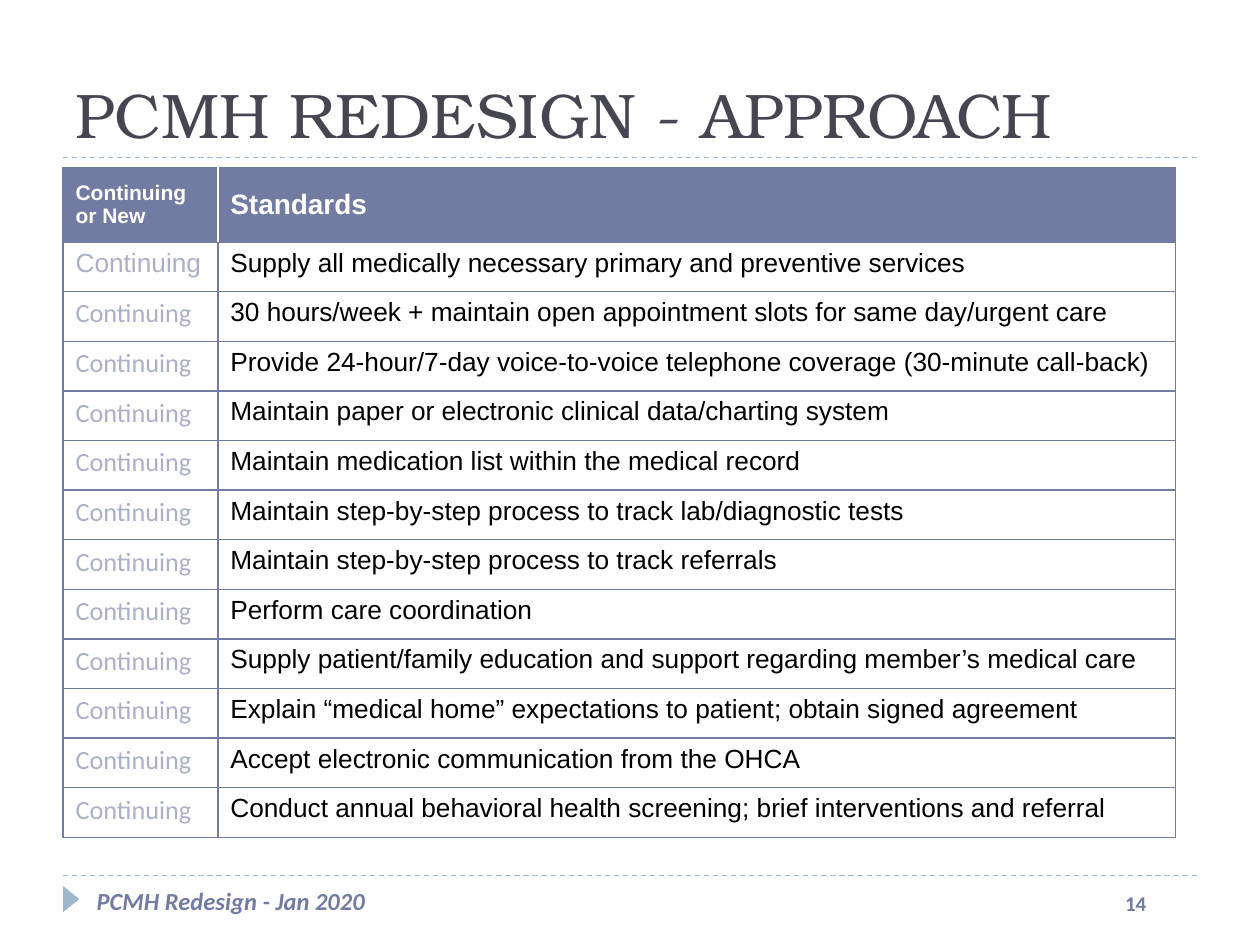
from dataclasses import dataclass

from lxml.etree import SubElement
from pptx import Presentation
from pptx.dml.color import RGBColor
from pptx.enum.dml import MSO_LINE_DASH_STYLE as Dash
from pptx.enum.shapes import MSO_CONNECTOR_TYPE as Connector, MSO_SHAPE as Shape
from pptx.enum.text import MSO_ANCHOR as Anchor, MSO_AUTO_SIZE as AutoSize, PP_ALIGN as Align
from pptx.oxml import parse_xml
from pptx.oxml.ns import nsdecls, qn
from pptx.util import Cm, Pt

PURPLE, PALE_PURPLE, SLATE, SKY = "727CA3", "AAB0C8", "464653", "9FB8CD"
WHITE, BLACK = "FFFFFF", "000000"
LEFT = 1.27
HEADER_HEIGHT, ROW_HEIGHT = 1.5, 1.0
COLUMN_WIDTHS = (3.12, 19.31)


@dataclass
class Standard:
    text: str
    status: str = "Continuing"
    status_font: str = "Calibri"


STANDARDS = [
    Standard("Supply all medically necessary primary and preventive services", status_font="Arial"),
    Standard("30 hours/week + maintain open appointment slots for same day/urgent care"),
    Standard("Provide 24-hour/7-day voice-to-voice telephone coverage (30-minute call-back)"),
    Standard("Maintain paper or electronic clinical data/charting system"),
    Standard("Maintain medication list within the medical record"),
    Standard("Maintain step-by-step process to track lab/diagnostic tests"),
    Standard("Maintain step-by-step process to track referrals"),
    Standard("Perform care coordination"),
    Standard("Supply patient/family education and support regarding member’s medical care"),
    Standard("Explain “medical home” expectations to patient; obtain signed agreement"),
    Standard("Accept electronic communication from the OHCA"),
    Standard("Conduct annual behavioral health screening; brief interventions and referral"),
]


def rgb(color: str) -> RGBColor:
    return RGBColor.from_string(color)


def write(frame, text: str, *, size: float, color: str, font: str = "Arial",
          bold: bool = False, italic: bool = False) -> None:
    frame.word_wrap = True
    paragraph = frame.paragraphs[0]
    paragraph.alignment = Align.LEFT
    run = paragraph.add_run()
    run.text = text
    run.font.name, run.font.size = font, Pt(size)
    run.font.bold, run.font.italic = bold, italic
    run.font.color.rgb = rgb(color)


def add_rule(slide, y: float) -> None:
    """Draw a dashed horizontal line across the content width."""
    rule = slide.shapes.add_connector(Connector.STRAIGHT, Cm(LEFT), Cm(y), Cm(24.13), Cm(y))
    rule.line.color.rgb = rgb(SKY)
    rule.line.width = Pt(0.75)
    rule.line.dash_style = Dash.DASH
    SubElement(rule._element.spPr, qn("a:effectLst"))


def add_footer_text(slide, text: str, left: float, top: float, width: float, height: float,
                    *, size: float, italic: bool = False) -> None:
    box = slide.shapes.add_textbox(Cm(left), Cm(top), Cm(width), Cm(height))
    write(box.text_frame, text, size=size, color=PURPLE, font="Calibri", bold=True, italic=italic)


def set_borders(cell, **sides: tuple[str, float]) -> None:
    """Set borders, given as L, R, T, B in that order, each a colour and a width in points."""
    properties = cell._tc.get_or_add_tcPr()
    for index, (side, (color, width)) in enumerate(sides.items()):
        properties.insert(index, parse_xml(
            f'<a:ln{side} {nsdecls("a")} w="{Pt(width)}"><a:solidFill>'
            f'<a:srgbClr val="{color}"/></a:solidFill></a:ln{side}>'))


def add_standards_table(slide) -> None:
    rows = len(STANDARDS) + 1
    table = slide.shapes.add_table(
        rows, 2, Cm(LEFT), Cm(3.38), Cm(sum(COLUMN_WIDTHS)),
        Cm(HEADER_HEIGHT + ROW_HEIGHT * len(STANDARDS))).table
    table.horz_banding = False
    for column, width in zip(table.columns, COLUMN_WIDTHS):
        column.width = Cm(width)
    for index, row in enumerate(table.rows):
        row.height = Cm(ROW_HEIGHT if index else HEADER_HEIGHT)

    for column, (heading, size) in enumerate([("Continuing or New", 12), ("Standards", 16)]):
        cell = table.cell(0, column)
        cell.vertical_anchor = Anchor.MIDDLE
        cell.fill.solid()
        cell.fill.fore_color.rgb = rgb(PURPLE)
        write(cell.text_frame, heading, size=size, color=WHITE, bold=True)

    for index, standard in enumerate(STANDARDS, start=1):
        status, description = table.cell(index, 0), table.cell(index, 1)
        write(status.text_frame, standard.status, size=15, color=PALE_PURPLE,
              font=standard.status_font)
        write(description.text_frame, standard.text, size=15, color=BLACK)
        status.fill.background()
        description.fill.background()

    outer = (PURPLE, 0.75)
    for index in range(rows):
        divider = (PURPLE if index else WHITE, 1)
        top = (PURPLE, 1 if index > 1 else 0.75)
        bottom = (PURPLE, 1 if 0 < index < rows - 1 else 0.75)
        set_borders(table.cell(index, 0), L=outer, R=divider, T=top, B=bottom)
        set_borders(table.cell(index, 1), L=divider, R=outer, T=top, B=bottom)


def main() -> None:
    deck = Presentation()
    deck.slide_width, deck.slide_height = Cm(25.4), Cm(19.05)
    slide = deck.slides.add_slide(deck.slide_layouts[5])

    title = slide.shapes.title
    title.left, title.top, title.width, title.height = Cm(LEFT), Cm(0.43), Cm(22.86), Cm(2.74)
    title.text_frame.vertical_anchor = Anchor.BOTTOM
    title.text_frame.auto_size = AutoSize.NONE
    write(title.text_frame, "PCMH REDESIGN - APPROACH", size=36, color=SLATE,
          font="TeX Gyre Bonum")

    for y in (17.65, 3.18):
        add_rule(slide, y)

    marker = slide.shapes.add_shape(Shape.ISOSCELES_TRIANGLE, Cm(1.17), Cm(17.96), Cm(0.53), Cm(0.33))
    marker.rotation = 90
    marker.shadow.inherit = False
    marker.fill.solid()
    marker.fill.fore_color.rgb = rgb(SKY)
    marker.line.fill.background()

    add_footer_text(slide, "14", 22.43, 17.83, 1.47, 1.02, size=12)
    add_footer_text(slide, "PCMH Redesign - Jan 2020", 1.7, 17.73, 11.43, 1.32, size=14, italic=True)
    add_standards_table(slide)
    deck.save("out.pptx")


if __name__ == "__main__":
    main()
